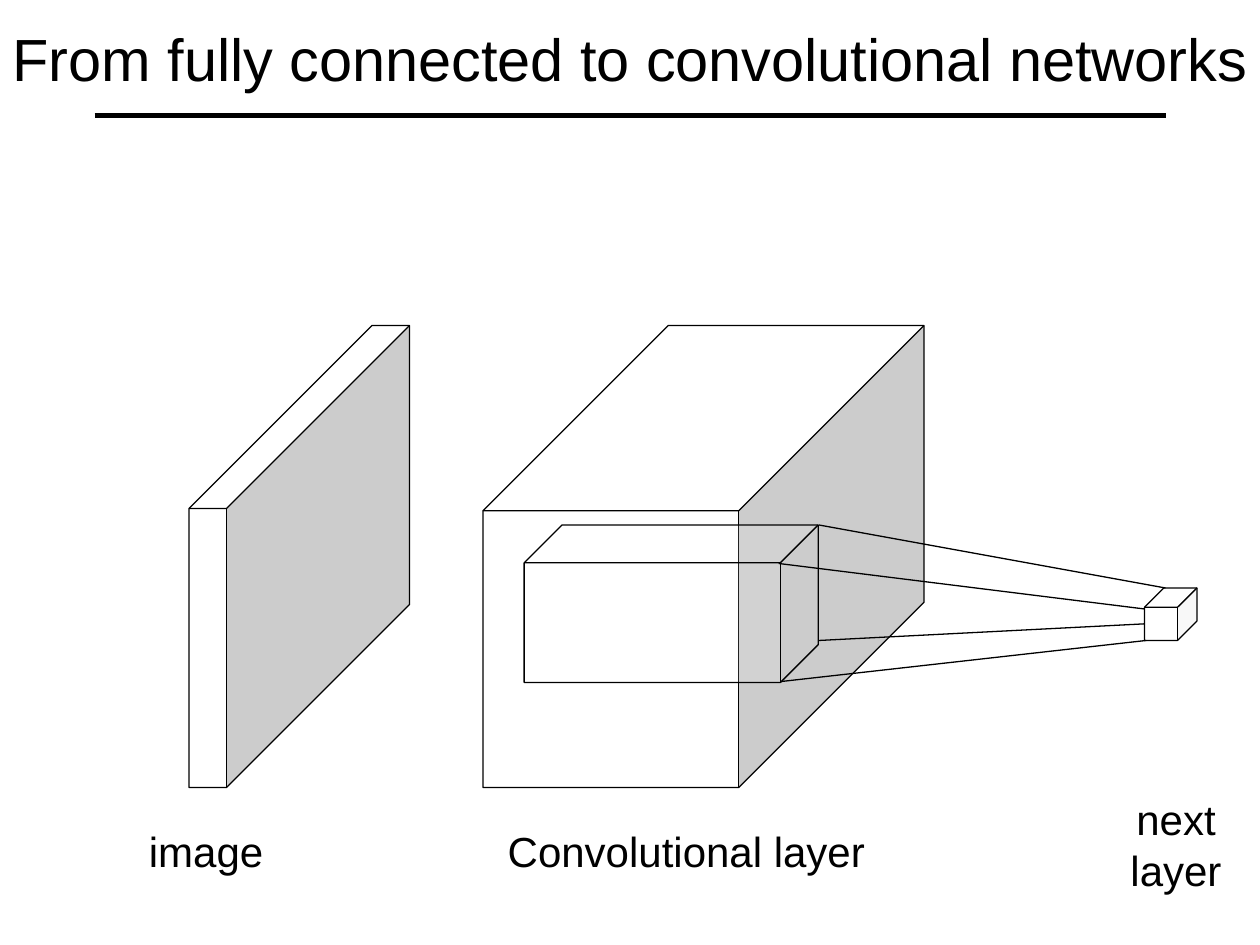
from lxml import etree
from pptx import Presentation
from pptx.dml.color import RGBColor
from pptx.enum import shapes, text
from pptx.oxml import ns
from pptx.util import Pt

BLACK = "000000"
WHITE = "FFFFFF"
CUBES = [
    ((108, 186, 126, 264), 0.83, None),
    ((276, 186, 252, 264), 0.42, None),
    ((299.5, 300, 168, 90), 0.24, 13),
    ((654, 336, 30, 30), 0.37, 13),
]
PROJECTIONS = [
    ((468, 300), (666, 336)),
    ((445, 322), (654, 348)),
    ((446, 389.5), (655, 366)),
    ((468, 366), (654, 356.5)),
]


def colour(value):
    return RGBColor.from_string(value)


def place(box, left, top, width, height):
    box.left, box.top, box.width, box.height = map(Pt, (left, top, width, height))


def write(box, content, size=24, align=text.PP_ALIGN.LEFT, wrap=True,
          anchor=text.MSO_ANCHOR.TOP):
    frame = box.text_frame
    frame.word_wrap = wrap
    frame.vertical_anchor = anchor
    para = frame.paragraphs[0]
    para.alignment = align
    span = para.add_run()
    span.text = content
    span.font.size = Pt(size)
    span.font.name = "Arial"
    span.font.color.rgb = colour(BLACK)


def add_title(page, content):
    box = page.shapes.title
    place(box, 0, 0, 732, 66)
    box.text_frame.auto_size = text.MSO_AUTO_SIZE.NONE
    write(box, content, size=34, anchor=text.MSO_ANCHOR.MIDDLE)


def add_label(page, content, bounds, **style):
    box = page.shapes.add_textbox(*map(Pt, bounds))
    write(box, content, **style)
    box.text_frame.auto_size = text.MSO_AUTO_SIZE.SHAPE_TO_FIT_TEXT


def add_cube(page, bounds, depth, opacity=None):
    cube = page.shapes.add_shape(shapes.MSO_SHAPE.CUBE, *map(Pt, bounds))
    cube.adjustments[0] = depth
    cube.shadow.inherit = False
    cube.fill.solid()
    cube.fill.fore_color.rgb = colour(WHITE)
    cube.line.color.rgb = colour(BLACK)
    cube.line.width = Pt(0.75)
    if opacity is not None:
        fill = cube.fill._xPr.find(ns.qn("a:solidFill"))
        etree.SubElement(fill[0], ns.qn("a:alpha"), val=str(opacity * 1000))


def add_line(page, start, end, width=0.75):
    line = page.shapes.add_connector(
        shapes.MSO_CONNECTOR.STRAIGHT, *map(Pt, start + end))
    line.line.color.rgb = colour(BLACK)
    line.line.width = Pt(width)
    etree.SubElement(line._element.spPr, ns.qn("a:effectLst"))


def main():
    deck = Presentation()
    deck.slide_width, deck.slide_height = Pt(720), Pt(540)
    page = deck.slides.add_slide(deck.slide_layouts[5])

    add_title(page, "From fully connected to convolutional networks")
    add_line(page, (54, 66), (666, 66), width=3)
    for bounds, depth, opacity in CUBES:
        add_cube(page, bounds, depth, opacity)
    for start, end in PROJECTIONS:
        add_line(page, start, end)
    add_label(page, "image", (78, 468, 80.5, 36), wrap=False)
    add_label(page, "Convolutional layer", (283, 468, 220.5, 36), wrap=False)
    add_label(page, "next layer", (624, 450, 96, 65.5),
              align=text.PP_ALIGN.CENTER)

    deck.save("out.pptx")


if __name__ == "__main__":
    main()
